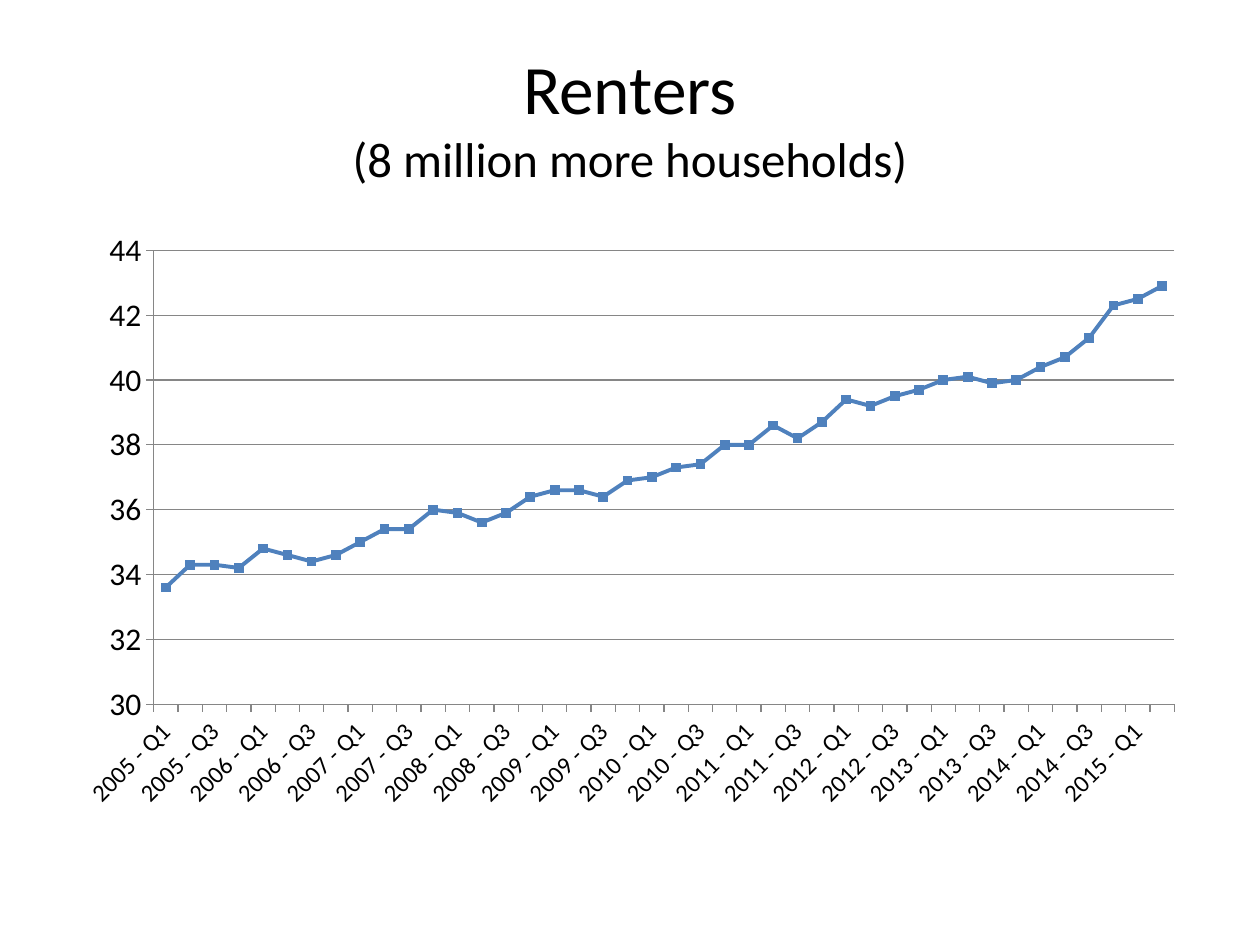
from dataclasses import dataclass
from itertools import islice, product

from lxml import etree
from pptx import Presentation
from pptx.chart.data import CategoryChartData
from pptx.dml.color import RGBColor
from pptx.enum.chart import XL_CHART_TYPE as ChartType, XL_MARKER_STYLE as Marker
from pptx.enum.chart import XL_TICK_MARK as Tick
from pptx.enum.text import MSO_ANCHOR as Anchor, PP_ALIGN as Align
from pptx.oxml import parse_xml
from pptx.oxml.ns import nsdecls, qn
from pptx.util import Pt


@dataclass(frozen=True)
class Theme:
    font: str = "Calibri"
    text: RGBColor = RGBColor(0, 0, 0)
    line: RGBColor = RGBColor(0x4F, 0x81, 0xBD)
    axis: RGBColor = RGBColor(0x86, 0x86, 0x86)
    title: float = 39.6
    subtitle: float = 27.9
    values: float = 18
    categories: float = 14


THEME = Theme()
RENTERS = [
    33.6, 34.3, 34.3, 34.2, 34.8, 34.6, 34.4, 34.6, 35, 35.4, 35.4, 36,
    35.9, 35.6, 35.9, 36.4, 36.6, 36.6, 36.4, 36.9, 37, 37.3, 37.4, 38,
    38, 38.6, 38.2, 38.7, 39.4, 39.2, 39.5, 39.7, 40, 40.1, 39.9, 40,
    40.4, 40.7, 41.3, 42.3, 42.5, 42.9,
]


def style_font(font, size):
    font.name = THEME.font
    font.size = Pt(size)
    font.color.rgb = THEME.text


def add_title(s, heading, subheading, left, top, width, height):
    tf = s.shapes.add_textbox(Pt(left), Pt(top), Pt(width), Pt(height)).text_frame
    tf.word_wrap = True
    tf.vertical_anchor = Anchor.MIDDLE
    p = tf.paragraphs[0]
    p.alignment = Align.CENTER
    r = p.add_run()
    r.text = heading
    style_font(r.font, THEME.title)
    p.add_line_break()
    r = p.add_run()
    r.text = subheading
    style_font(r.font, THEME.subtitle)


def style_axis(axis, size):
    style_font(axis.tick_labels.font, size)
    axis.major_tick_mark = Tick.OUTSIDE
    axis.minor_tick_mark = Tick.NONE
    axis.format.line.color.rgb = THEME.axis
    axis.format.line.width = Pt(0.75)


def place_plot(chart, x, y, w, h):
    area = chart.element.find(".//" + qn("c:plotArea"))
    for old in area.findall(qn("c:layout")):
        area.remove(old)
    layout = parse_xml(f"<c:layout {nsdecls('c')}><c:manualLayout/></c:layout>")
    settings = dict(layoutTarget="inner", xMode="edge", yMode="edge", x=x, y=y, w=w, h=h)
    for name, value in settings.items():
        etree.SubElement(layout[0], qn(f"c:{name}")).set("val", str(value))
    area.insert(0, layout)


def add_line_chart(s, categories, values, left, top, width, height):
    data = CategoryChartData()
    data.categories = categories
    data.add_series("Series 1", values)
    chart = s.shapes.add_chart(
        ChartType.LINE_MARKERS, Pt(left), Pt(top), Pt(width), Pt(height), data
    ).chart
    chart.has_legend = False
    chart.has_title = False
    style_font(chart.font, THEME.values)
    place_plot(chart, 0.08, 0.05, 0.9, 0.76)

    cat_axis, val_axis = chart.category_axis, chart.value_axis
    style_axis(cat_axis, THEME.categories)
    body = cat_axis._element.find(qn("c:txPr")).find(qn("a:bodyPr"))
    body.set("rot", "-2700000")
    style_axis(val_axis, THEME.values)
    val_axis.minimum_scale = 30
    val_axis.maximum_scale = 44
    val_axis.major_unit = 2
    val_axis.has_major_gridlines = True
    val_axis.major_gridlines.format.line.color.rgb = THEME.axis
    val_axis.major_gridlines.format.line.width = Pt(0.75)

    plot = chart.plots[0]
    plot.vary_by_categories = False
    series = plot.series[0]
    series.smooth = False
    series.format.line.color.rgb = THEME.line
    series.format.line.width = Pt(2.25)
    series.marker.style = Marker.SQUARE
    series.marker.size = 5
    series.marker.format.fill.solid()
    series.marker.format.fill.fore_color.rgb = THEME.line
    series.marker.format.line.color.rgb = THEME.line


def main():
    prs = Presentation()
    prs.slide_width, prs.slide_height = Pt(720), Pt(540)
    s = prs.slides.add_slide(prs.slide_layouts[6])
    add_title(s, "Renters", "(8 million more households)", 36, 21.6, 648, 90)
    quarters = (f"{year} - Q{q}" for year, q in product(range(2005, 2016), range(1, 5)))
    add_line_chart(s, list(islice(quarters, len(RENTERS))), RENTERS, 36, 126, 648, 341.28)
    prs.save("out.pptx")


if __name__ == "__main__":
    main()
